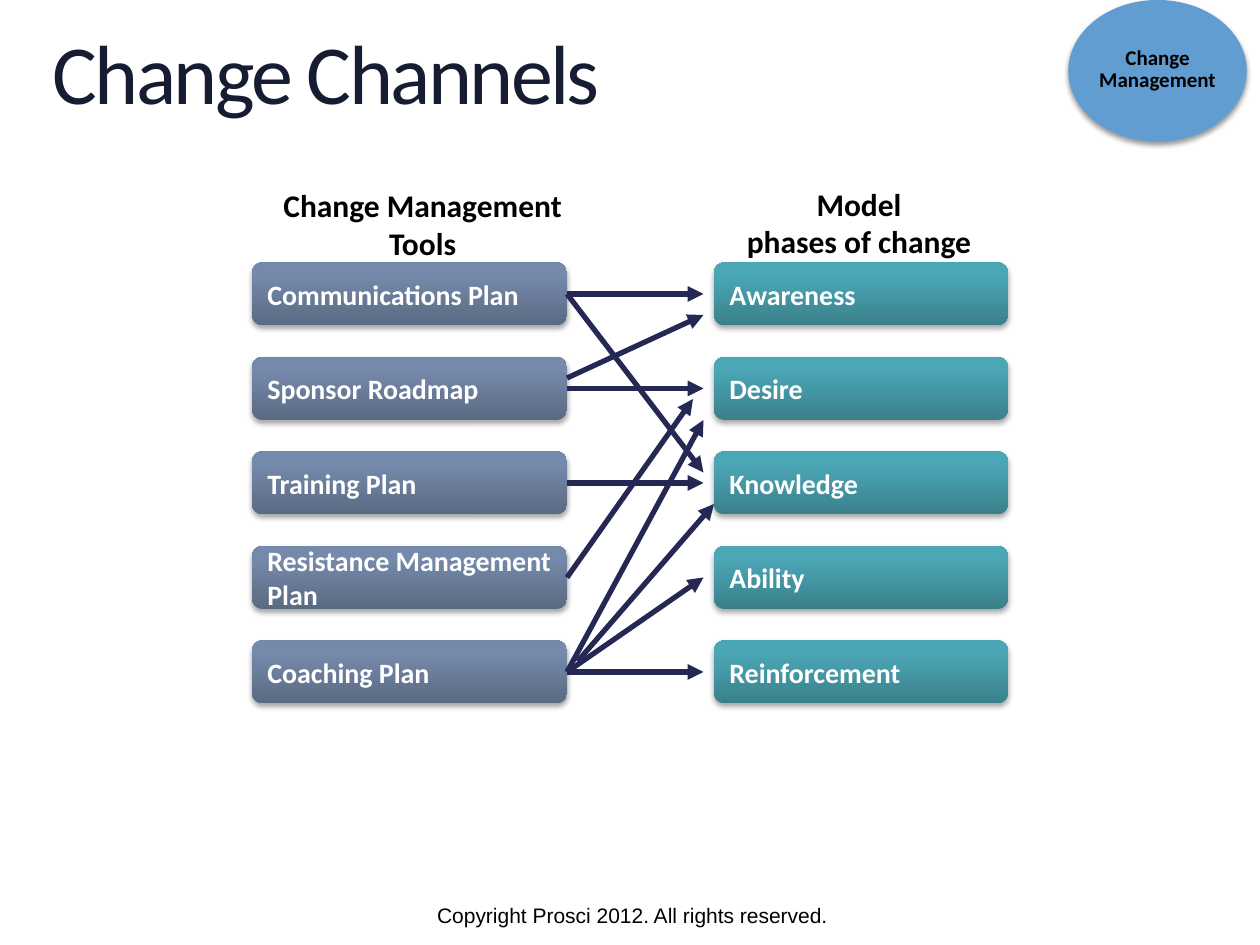
from copy import deepcopy

from pptx import Presentation
from pptx.dml.color import RGBColor
from pptx.enum.shapes import MSO_CONNECTOR, MSO_SHAPE
from pptx.enum.text import MSO_ANCHOR, PP_ALIGN
from pptx.oxml import parse_xml
from pptx.oxml.ns import nsdecls, qn
from pptx.util import Emu, Pt

ROUNDED = MSO_SHAPE.ROUNDED_RECTANGLE
ELLIPSE = MSO_SHAPE.OVAL
STRAIGHT = MSO_CONNECTOR.STRAIGHT
LEFT, CENTER = PP_ALIGN.LEFT, PP_ALIGN.CENTER
TOP, MIDDLE = MSO_ANCHOR.TOP, MSO_ANCHOR.MIDDLE

EMU_PER_PX = 9525
ROW_TOP, ROW_PITCH, ROW_HEIGHT = 200, 72, 48
TOOL_LEFT, TOOL_WIDTH = 192, 240
PHASE_LEFT, PHASE_WIDTH = 544, 224
ARROW_START, ARROW_END = TOOL_LEFT + TOOL_WIDTH, PHASE_LEFT - 8

TOOLS = [
    ["Communications Plan"],
    ["Sponsor Roadmap"],
    ["Training Plan"],
    ["Resistance Management", "Plan"],
    ["Coaching Plan"],
]
PHASES = [["Awareness"], ["Desire"], ["Knowledge"], ["Ability"], ["Reinforcement"]]

# (tool row, phase row, x and y shift at the tool, x and y shift at the phase)
LINKS = [
    (0, 2, 0, 0, 0, -8),
    (0, 0, 0, 0, 0, 0),
    (3, 1, 0, 0, -8, 8),
    (2, 2, 0, 0, 0, 0),
    (1, 1, 0, 0, 0, 0),
    (1, 0, 0, -8, 0, 16),
    (4, 1, 0, 0, 0, 24),
    (4, 3, 0, 0, 0, 0),
    (4, 4, 0, 0, 0, 0),
    (4, 2, 8, -8, 8, 16),
]


def px(length):
    return Emu(length * EMU_PER_PX)


def color(hex_string):
    return RGBColor.from_string(hex_string)


def add_effects(element, content=""):
    """Give the element its own effect list, empty for no effects."""
    element.spPr.append(
        parse_xml(f"<a:effectLst {nsdecls('a')}>{content}</a:effectLst>"))


def add_shadow(shape, opacity):
    add_effects(
        shape._element,
        f'<a:outerShdw blurRad="{Pt(3.1)}" dist="{Pt(1.8)}" dir="5400000" rotWithShape="0">'
        f'<a:srgbClr val="000000"><a:alpha val="{opacity * 1000}"/></a:srgbClr>'
        "</a:outerShdw>")


def write_text(shape, lines, size, text_color="000000", font="Calibri", bold=True,
               align=CENTER, anchor=TOP, inset=None, line_spacing=None, tracking=None):
    """Write one paragraph per line; tracking is in hundredths of a point."""
    frame = shape.text_frame
    frame.word_wrap = True
    frame.vertical_anchor = anchor
    if inset is not None:
        frame.margin_left = frame.margin_right = px(inset)
        frame.margin_top = frame.margin_bottom = px(inset)
    for index, line in enumerate(lines):
        paragraph = frame.add_paragraph() if index else frame.paragraphs[0]
        paragraph.alignment = align
        if line_spacing:
            paragraph.line_spacing = line_spacing
        run = paragraph.add_run()
        run.text = line
        run.font.name = font
        run.font.size = Pt(size)
        run.font.bold = bold
        run.font.color.rgb = color(text_color)
        if tracking:
            run._r.get_or_add_rPr().set("spc", str(tracking))


def add_text(slide, left, top, width, height, lines, size, **style):
    box = slide.shapes.add_textbox(px(left), px(top), px(width), px(height))
    write_text(box, lines, size, **style)


def fill_gradient(shape, stop_colors):
    """Fill from bottom to top, with stops at 0, 80 and 100 percent."""
    shape.fill.gradient()
    shape.fill.gradient_angle = 90
    stop_list = shape._element.spPr.find(".//" + qn("a:gsLst"))
    stop_list.append(deepcopy(stop_list[-1]))
    for stop, position, hex_string in zip(
            shape.fill.gradient_stops, (0, 0.8, 1), stop_colors):
        stop.position = position
        stop.color.rgb = color(hex_string)


def add_column(slide, left, width, labels, stop_colors):
    for row, lines in enumerate(labels):
        box = slide.shapes.add_shape(
            ROUNDED, px(left), px(ROW_TOP + row * ROW_PITCH), px(width), px(ROW_HEIGHT))
        fill_gradient(box, stop_colors)
        box.line.fill.background()
        add_shadow(box, 35)
        write_text(box, lines, 16, "FFFFFF", align=LEFT, anchor=MIDDLE)


def row_middle(row):
    return ROW_TOP + row * ROW_PITCH + ROW_HEIGHT // 2


def add_arrow(slide, tool, phase, start_dx, start_dy, end_dx, end_dy):
    arrow = slide.shapes.add_connector(
        STRAIGHT,
        px(ARROW_START + start_dx), px(row_middle(tool) + start_dy),
        px(ARROW_END + end_dx), px(row_middle(phase) + end_dy))
    arrow.line.color.rgb = color("242852")
    arrow.line.width = Pt(3)
    arrow.line._get_or_add_ln().append(
        parse_xml(f'<a:tailEnd {nsdecls("a")} type="triangle"/>'))
    add_effects(arrow._element)


def add_badge(slide):
    badge = slide.shapes.add_shape(ELLIPSE, px(814), px(0), px(136), px(108))
    badge.fill.solid()
    badge.fill.fore_color.rgb = color("629DD1")
    badge.line.fill.background()
    add_shadow(badge, 38)
    add_text(slide, 834, 15, 96, 76, ["Change Management"], 12,
             anchor=MIDDLE, inset=0, line_spacing=0.9)


def main():
    presentation = Presentation()
    presentation.slide_width = px(960)
    presentation.slide_height = px(720)
    slide = presentation.slides.add_slide(presentation.slide_layouts[6])

    add_column(slide, TOOL_LEFT, TOOL_WIDTH, TOOLS, ("5A6A83", "7589AA", "748AAC"))
    add_column(slide, PHASE_LEFT, PHASE_WIDTH, PHASES, ("3A808B", "4BA6B5", "49A8B8"))
    add_text(slide, 541, 136, 227, 67, ["Model", "phases of change"], 18)
    add_text(slide, 181, 137, 282, 67, ["Change Management", "Tools"], 18)
    for link in LINKS:
        add_arrow(slide, *link)
    add_text(slide, 40, 24, 880, 70, ["Change Channels"], 48, text_color="161D32",
             bold=False, align=LEFT, inset=0, line_spacing=0.9, tracking=-150)
    add_badge(slide)
    add_text(slide, 294, 683, 376, 50, ["Copyright Prosci 2012. All rights reserved."], 12,
             font="Arial", bold=False)
    presentation.save("out.pptx")


if __name__ == "__main__":
    main()
